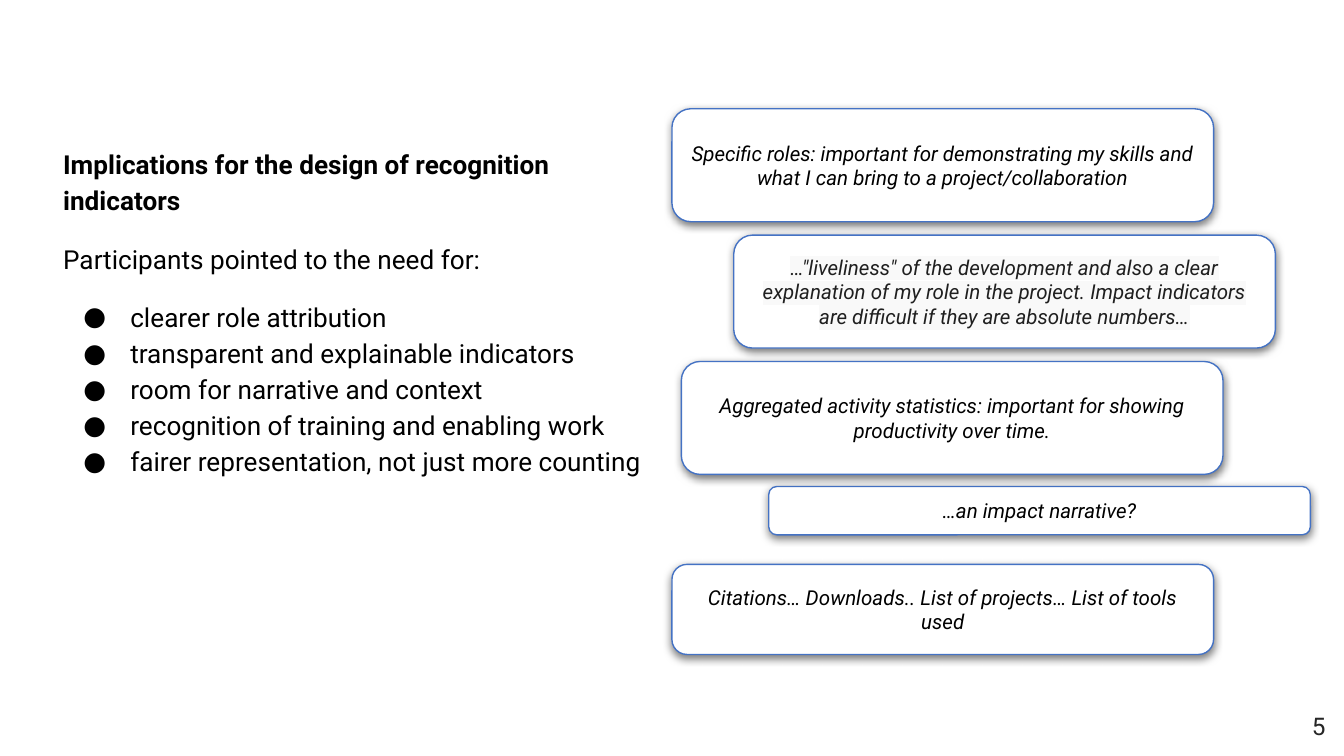
from lxml.etree import SubElement as Sub
from pptx import Presentation
from pptx.dml.color import RGBColor
from pptx.enum.shapes import MSO_SHAPE as Shape
from pptx.enum.text import MSO_ANCHOR as Anchor, PP_ALIGN as Align
from pptx.oxml.ns import qn
from pptx.util import Inches, Pt

BLACK = RGBColor(0x00, 0x00, 0x00)
DARK = RGBColor(0x1F, 0x1F, 0x1F)
GREY = RGBColor(0x26, 0x26, 0x26)
PALE = RGBColor(0xF9, 0xF9, 0xF9)
WHITE = RGBColor(0xFF, 0xFF, 0xFF)
BLUE = RGBColor(0x44, 0x72, 0xC4)

FACE = "Roboto"
HEAD = "Implications for the design of recognition indicators"
LEAD = "Participants pointed to the need for:"
NEEDS = [
    "clearer role attribution",
    "transparent and explainable indicators",
    "room for narrative and context",
    "recognition of training and enabling work",
    "fairer representation, not just more counting",
]
QUOTES = [
    (5, 0.81, 0.84, "Specific roles: important for demonstrating my skills and "
     "what I can bring to a project/collaboration", BLACK, None),
    (5.46, 1.75, 0.84, "…\"liveliness\" of the development and also a clear "
     "explanation of my role in the project. Impact indicators are difficult "
     "if they are absolute numbers…", DARK, PALE),
    (5.72, 3.62, 0.36, "…an impact narrative?", BLACK, None),
    (5.07, 2.69, 0.84, "Aggregated activity statistics: important for showing "
     "productivity over time.", BLACK, None),
    (5, 4.2, 0.67, "Citations… Downloads.. List of projects… List of tools used",
     BLACK, None),
]


def style(para, size, color, bold=False, italic=False):
    font = para.font
    font.name = FACE
    font.size = Pt(size)
    font.bold = bold
    font.italic = italic
    font.color.rgb = color


def inset(frame, side, top):
    frame.word_wrap = True
    frame.margin_left = frame.margin_right = Inches(side)
    frame.margin_top = frame.margin_bottom = Inches(top)


def add_box(slide, left, top, width, height, side, edge):
    box = slide.shapes.add_textbox(
        Inches(left), Inches(top), Inches(width), Inches(height))
    inset(box.text_frame, side, edge)
    return box.text_frame


def add_dot(para):
    props = para._p.get_or_add_pPr()
    props.set("marL", str(Inches(0.5)))
    props.set("indent", str(Inches(-0.35)))
    tint = Sub(props, qn("a:buClr"))
    Sub(tint, qn("a:srgbClr"), val=str(BLACK))
    Sub(props, qn("a:buSzPts"), val="1400")
    Sub(props, qn("a:buFont"), typeface=FACE)
    Sub(props, qn("a:buChar"), char="●")


def add_list(slide):
    frame = add_box(slide, 0.4, 1.03, 4.47, 3.85, 0.07, 0.04)
    for i, text in enumerate([HEAD, LEAD] + NEEDS):
        para = frame.paragraphs[0] if i == 0 else frame.add_paragraph()
        para.text = text
        para.line_spacing = 1.15
        para.space_before = Pt(12 if i in (1, 2) else 0)
        if i > 1:
            add_dot(para)
        style(para, 14, BLACK, bold=i == 0)


def add_shade(shape):
    shape.shadow.inherit = False
    effects = shape._element.spPr.find(qn("a:effectLst"))
    shade = Sub(effects, qn("a:outerShdw"), blurRad=str(Pt(4.5)),
                dist=str(Pt(1.5)), dir="5400000", algn="bl", rotWithShape="0")
    tint = Sub(shade, qn("a:srgbClr"), val=str(BLACK))
    Sub(tint, qn("a:alpha"), val="50000")


def add_quote(slide, left, top, height, text, color, mark):
    card = slide.shapes.add_shape(
        Shape.ROUNDED_RECTANGLE,
        Inches(left), Inches(top), Inches(4.03), Inches(height))
    card.fill.solid()
    card.fill.fore_color.rgb = WHITE
    card.line.color.rgb = BLUE
    card.line.width = Pt(0.75)
    add_shade(card)
    frame = card.text_frame
    inset(frame, 0.1, 0.1)
    frame.vertical_anchor = Anchor.MIDDLE
    para = frame.paragraphs[0]
    para.text = text
    para.alignment = Align.CENTER
    style(para, 11, color, italic=True)
    if mark:
        props = para.runs[0]._r.get_or_add_rPr()
        Sub(Sub(props, qn("a:highlight")), qn("a:srgbClr"), val=str(mark))


def add_page(slide):
    para = add_box(slide, 9.36, 5.19, 0.6, 0.43, 0.1, 0.1).paragraphs[0]
    para.text = "5"
    para.alignment = Align.RIGHT
    style(para, 13, GREY)


def main():
    deck = Presentation()
    deck.slide_width = Inches(10)
    deck.slide_height = deck.slide_width * 9 // 16
    slide = deck.slides.add_slide(deck.slide_layouts[6])
    add_list(slide)
    add_page(slide)
    for quote in QUOTES:
        add_quote(slide, *quote)
    deck.save("out.pptx")


if __name__ == "__main__":
    main()
